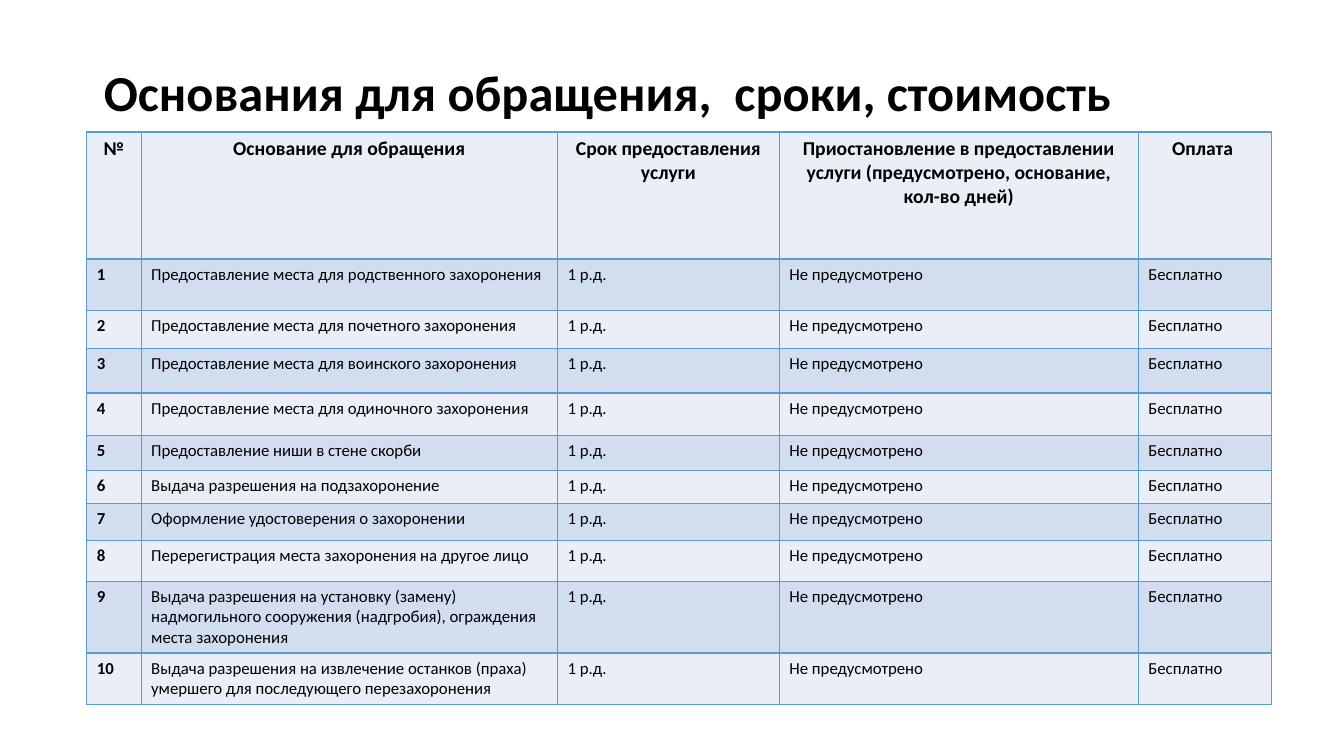
from lxml.etree import SubElement
from pptx import Presentation
from pptx.dml.color import RGBColor
from pptx.enum.text import MSO_ANCHOR, PP_ALIGN
from pptx.oxml.ns import qn
from pptx.util import Inches, Pt

COLORS = {"text": "000000", "border": "5B9BD5", "light": "EAEFF7", "dark": "D2DEEF"}
FONT = "Calibri"
COLUMN_WIDTHS = [0.54, 4.13, 2.2, 3.56, 1.32]
ROW_HEIGHTS = [1.26, 0.51, 0.38, 0.44, 0.42, 0.35, 0.33, 0.36, 0.41, 0.7, 0.51]
HEADERS = [
    "№",
    "Основание для обращения",
    "Срок предоставления услуги",
    "Приостановление в предоставлении услуги (предусмотрено, основание, кол-во дней)",
    "Оплата ",
]
SERVICES = [
    "Предоставление места для родственного захоронения",
    "Предоставление места для почетного захоронения",
    "Предоставление места для воинского захоронения",
    "Предоставление места для одиночного захоронения",
    "Предоставление ниши в стене скорби",
    "Выдача разрешения на подзахоронение",
    "Оформление удостоверения о захоронении",
    "Перерегистрация места захоронения на другое лицо",
    "Выдача разрешения на установку (замену) надмогильного сооружения (надгробия), "
    "ограждения места захоронения",
    "Выдача разрешения на извлечение останков (праха) умершего для последующего "
    "перезахоронения",
]
SAME_TERMS = ["1 р.д.", "Не предусмотрено", "Бесплатно"]


def add_text(paragraph, text, size, bold, alignment):
    paragraph.alignment = alignment
    run = paragraph.add_run()
    run.text = text
    run.font.name = FONT
    run.font.size = Pt(size)
    run.font.bold = bold
    run.font.color.rgb = RGBColor.from_string(COLORS["text"])


def add_borders(cell):
    properties = cell._tc.get_or_add_tcPr()
    for side in ("a:lnL", "a:lnR", "a:lnT", "a:lnB"):
        line = SubElement(properties, qn(side), w=str(Pt(1)))
        fill = SubElement(line, qn("a:solidFill"))
        SubElement(fill, qn("a:srgbClr"), val=COLORS["border"])


presentation = Presentation()
presentation.slide_width = Inches(13.33)
presentation.slide_height = Inches(7.5)
slide = presentation.slides.add_slide(presentation.slide_layouts[5])

# Title
title = slide.shapes.title
title.left, title.top = Inches(0.93), Inches(0.22)
title.width, title.height = Inches(12.27), Inches(1.45)
title.text_frame.vertical_anchor = MSO_ANCHOR.MIDDLE
title_paragraph = title.text_frame.paragraphs[0]
title_paragraph.line_spacing = 0.9
add_text(title_paragraph, "Основания для обращения,  сроки, стоимость", 36, True, PP_ALIGN.LEFT)

# Table grid
rows = [HEADERS] + [
    [str(number), service] + SAME_TERMS for number, service in enumerate(SERVICES, 1)
]
table = slide.shapes.add_table(
    len(rows), len(HEADERS), Inches(0.86), Inches(1.31),
    Inches(sum(COLUMN_WIDTHS)), Inches(sum(ROW_HEIGHTS)),
).table
table.first_row = False
table.horz_banding = False
for column, width in zip(table.columns, COLUMN_WIDTHS):
    column.width = Inches(width)
for row, height in zip(table.rows, ROW_HEIGHTS):
    row.height = Inches(height)

# Cells: centred header, then alternating bands with a bold number column
for row_index, texts in enumerate(rows):
    is_header = row_index == 0
    band = COLORS["dark" if row_index % 2 else "light"]
    for column_index, text in enumerate(texts):
        cell = table.cell(row_index, column_index)
        add_borders(cell)
        cell.fill.solid()
        cell.fill.fore_color.rgb = RGBColor.from_string(band)
        add_text(
            cell.text_frame.paragraphs[0], text,
            14 if is_header else 12,
            is_header or column_index == 0,
            PP_ALIGN.CENTER if is_header else PP_ALIGN.LEFT,
        )

presentation.save("out.pptx")
